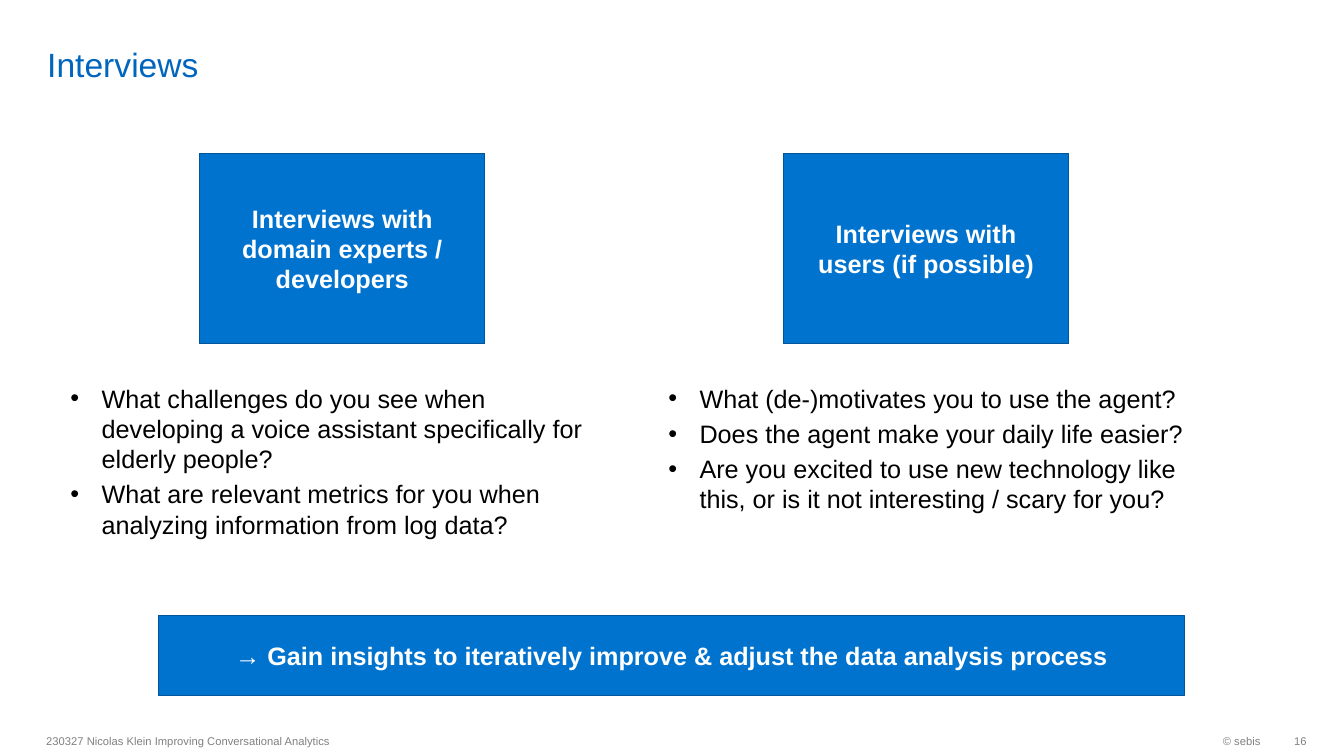
from dataclasses import dataclass
from pptx import Presentation
from pptx.dml.color import RGBColor
from pptx.enum.shapes import MSO_SHAPE
from pptx.enum.text import MSO_ANCHOR, PP_ALIGN
from pptx.oxml.xmlchemy import OxmlElement
from pptx.util import Inches, Pt


@dataclass(frozen=True)
class Theme:
    font: str = "Arial"
    title: str = "0065BD"
    fill: str = "0073CF"
    edge: str = "005599"
    body: str = "000000"
    light: str = "FFFFFF"
    muted: str = "808080"
    head: int = 24
    text: int = 18
    small: int = 8


THEME = Theme()


def add_run(para, text, size, color, bold=False):
    run = para.add_run()
    run.text = text
    run.font.name = THEME.font
    run.font.size = Pt(size)
    run.font.bold = bold
    run.font.color.rgb = RGBColor.from_string(color)


def add_box(slide, box, anchor=MSO_ANCHOR.TOP):
    frame = slide.shapes.add_textbox(*map(Inches, box)).text_frame
    frame.word_wrap = True
    frame.vertical_anchor = anchor
    return frame


def add_bullet(para):
    props = para._p.get_or_add_pPr()
    props.set("marL", str(Inches(0.31)))
    props.set("indent", str(-Inches(0.31)))
    font = OxmlElement("a:buFont")
    font.set("typeface", THEME.font)
    mark = OxmlElement("a:buChar")
    mark.set("char", "•")
    props.extend([font, mark])


# Heading of the slide
def add_title(slide, box, text):
    frame = add_box(slide, box, MSO_ANCHOR.BOTTOM)
    frame.margin_top = frame.margin_bottom = 0
    add_run(frame.paragraphs[0], text, THEME.head, THEME.title)


# Blue panel with centred bold lines
def add_panel(slide, box, lines):
    panel = slide.shapes.add_shape(MSO_SHAPE.RECTANGLE, *map(Inches, box))
    panel.shadow.inherit = False
    panel.fill.solid()
    panel.fill.fore_color.rgb = RGBColor.from_string(THEME.fill)
    panel.line.color.rgb = RGBColor.from_string(THEME.edge)
    panel.line.width = Pt(0.85)
    frame = panel.text_frame
    frame.word_wrap = True
    frame.vertical_anchor = MSO_ANCHOR.MIDDLE
    para = frame.paragraphs[0]
    para.alignment = PP_ALIGN.CENTER
    for i, line in enumerate(lines):
        if i:
            para.add_line_break()
        add_run(para, line, THEME.text, THEME.light, True)


# Bulleted questions
def add_list(slide, box, items):
    frame = add_box(slide, box)
    for i, item in enumerate(items):
        para = frame.add_paragraph() if i else frame.paragraphs[0]
        if i:
            para.space_before = Pt(3.6)
        add_bullet(para)
        add_run(para, item, THEME.text, THEME.body)


# Footer: talk, owner and page number
def add_footer(slide, box):
    left, top, width, height = box
    right = left + width
    parts = [
        (left, 6.3, "230327 Nicolas Klein Improving Conversational Analytics",
         PP_ALIGN.LEFT, 0.1),
        (right - 2.7, 2.34, "© sebis", PP_ALIGN.RIGHT, 0.1),
        (right - 0.36, 0.36, "16", PP_ALIGN.RIGHT, 0),
    ]
    for x, wide, text, align, inset in parts:
        frame = add_box(slide, (x, top, wide, height), MSO_ANCHOR.MIDDLE)
        frame.margin_right = Inches(inset)
        frame.paragraphs[0].alignment = align
        add_run(frame.paragraphs[0], text, THEME.small, THEME.muted)


def main():
    deck = Presentation()
    deck.slide_width, deck.slide_height = Inches(13.33), Inches(7.5)
    slide = deck.slides.add_slide(deck.slide_layouts[6])

    add_title(slide, (0.37, 0.05, 11.58, 0.79), "Interviews")

    # One column per interview group
    groups = [
        (1.98, ["Interviews with domain experts / developers"], 0.6, 5.59,
         ["What challenges do you see when developing a voice assistant "
          "specifically for elderly people?",
          "What are relevant metrics for you when analyzing information "
          "from log data?"]),
        (7.77, ["Interviews with", "users (if possible)"], 6.53, 5.32,
         ["What (de-)motivates you to use the agent?",
          "Does the agent make your daily life easier?",
          "Are you excited to use new technology like this, or is it not "
          "interesting / scary for you?"]),
    ]
    for x, label, left, width, items in groups:
        add_panel(slide, (x, 1.52, 2.83, 1.89), label)
        add_list(slide, (left, 3.75, width, 2.67), items)

    # Conclusion
    add_panel(slide, (1.57, 6.11, 10.18, 0.79),
              ["→ Gain insights to iteratively improve & adjust the data "
               "analysis process"])
    add_footer(slide, (0.36, 7.19, 12.6, 0.32))
    deck.save("out.pptx")


if __name__ == "__main__":
    main()
